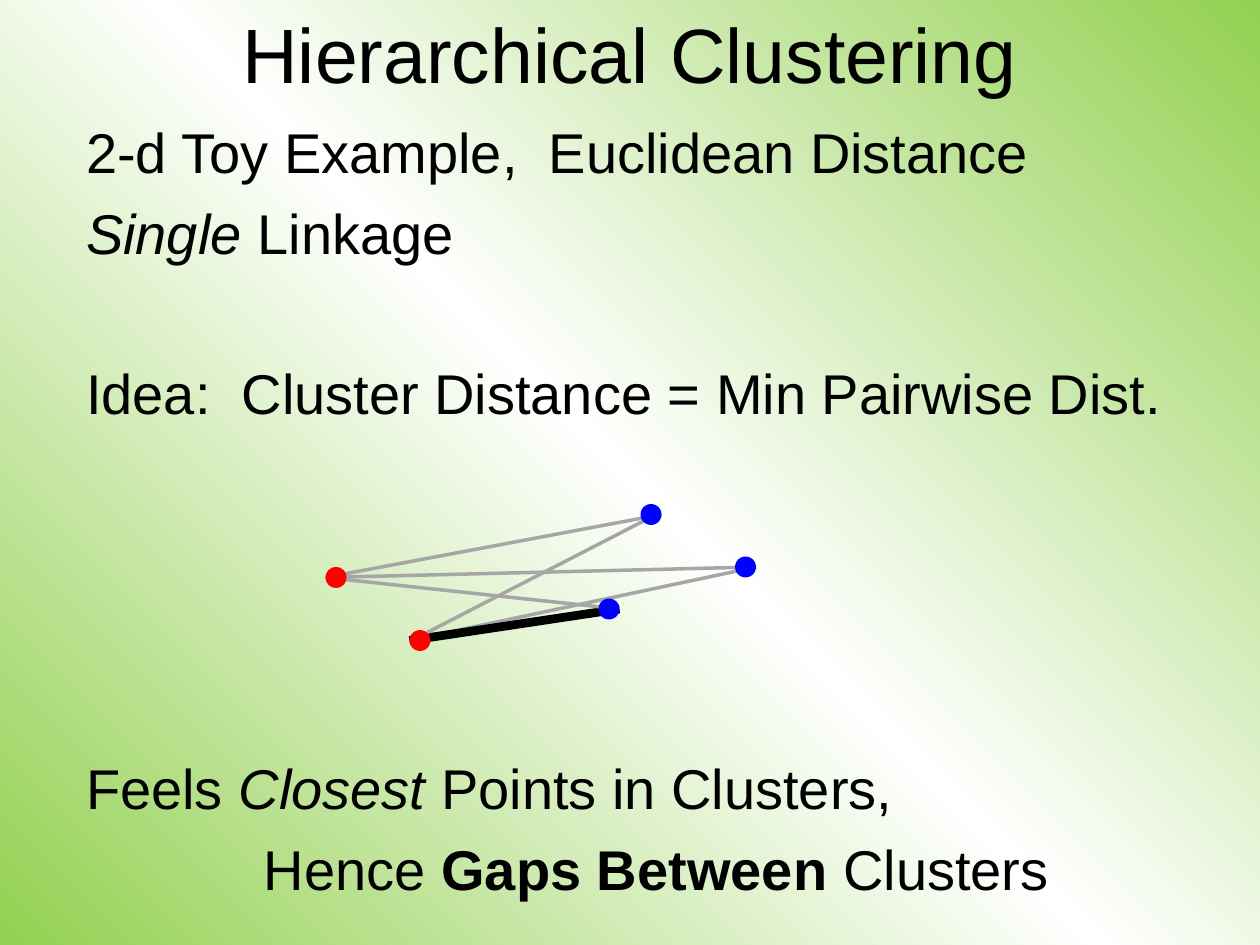
from copy import deepcopy
from dataclasses import dataclass

from lxml import etree
from pptx import Presentation
from pptx.dml.color import RGBColor
from pptx.enum import shapes, text
from pptx.oxml import ns
from pptx.util import Pt

BLACK = RGBColor(0x00, 0x00, 0x00)
WHITE = RGBColor(0xFF, 0xFF, 0xFF)
GREEN = RGBColor(0x92, 0xD0, 0x50)
GREY = RGBColor(0xA6, 0xA6, 0xA6)
RED = RGBColor(0xFF, 0x00, 0x00)
BLUE = RGBColor(0x00, 0x00, 0xFF)

DOT = 12  # diameter of a data point
LINE_GAP = 8  # space before a body line
LINE_PITCH = 44.8  # one body line with its gap


@dataclass(frozen=True)
class DataPoint:
    left: float
    top: float
    color: RGBColor

    @property
    def left_end(self) -> tuple[float, float]:
        return self.left, self.top + DOT / 2

    @property
    def right_end(self) -> tuple[float, float]:
        return self.left + DOT, self.top + DOT / 2


@dataclass(frozen=True)
class BodyLine:
    runs: tuple[tuple[str, str], ...]  # text and style: "", "i" or "b"
    space: float = LINE_GAP
    align: text.PP_ALIGN = text.PP_ALIGN.LEFT


BODY_LINES = (
    BodyLine((("2-d Toy Example,  Euclidean Distance", ""),), space=0),
    BodyLine((("Single", "i"), (" Linkage", ""))),
    BodyLine((("Idea:  Cluster Distance = Min Pairwise Dist.", ""),),
             space=LINE_GAP + LINE_PITCH),
    BodyLine((("Feels ", ""), ("Closest", "i"), (" Points in Clusters,", "")),
             space=LINE_GAP + 4 * LINE_PITCH),
    BodyLine((("Hence ", ""), ("Gaps Between", "b"), (" Clusters", "")),
             align=text.PP_ALIGN.CENTER),
)

RED_LEFT = DataPoint(186, 324, RED)
RED_LOW = DataPoint(234, 360, RED)
BLUE_TOP = DataPoint(366, 288, BLUE)
BLUE_LOW = DataPoint(342, 342, BLUE)
BLUE_RIGHT = DataPoint(420, 318, BLUE)


def add_run(paragraph, words: str, *, size: float, style: str = "") -> None:
    run = paragraph.add_run()
    run.text = words
    run.font.name = "Arial"
    run.font.size = Pt(size)
    run.font.italic = style == "i"
    run.font.bold = style == "b"
    run.font.color.rgb = BLACK


def place(shape, left: float, top: float, width: float, height: float) -> None:
    shape.left, shape.top = Pt(left), Pt(top)
    shape.width, shape.height = Pt(width), Pt(height)


def paint_background(slide) -> None:
    fill = slide.background.fill
    fill.gradient()
    fill.gradient_angle = 225
    first, last = fill.gradient_stops
    first.color.rgb, first.position = WHITE, 0.5
    last.color.rgb, last.position = GREEN, 1
    stops = slide.element.xpath(".//a:gsLst")[0]
    start = deepcopy(stops[-1])
    start.set("pos", "0")
    stops.insert(0, start)


def add_body_line(paragraph, line: BodyLine) -> None:
    paragraph.alignment = line.align
    paragraph.space_before = Pt(line.space)
    properties = paragraph._p.get_or_add_pPr()
    properties.set("marL", "0")
    properties.set("indent", "0")
    etree.SubElement(properties, ns.qn("a:buNone"))
    for words, style in line.runs:
        add_run(paragraph, words, size=32, style=style)


def add_link(slide, start: tuple[float, float], end: tuple[float, float],
             color: RGBColor = GREY, width: float = 2) -> None:
    link = slide.shapes.add_connector(
        shapes.MSO_CONNECTOR.STRAIGHT, *map(Pt, start + end))
    link.line.color.rgb = color
    link.line.width = Pt(width)
    etree.SubElement(link._element.spPr, ns.qn("a:effectLst"))


def add_dot(slide, point: DataPoint) -> None:
    dot = slide.shapes.add_shape(
        shapes.MSO_SHAPE.OVAL, Pt(point.left), Pt(point.top), Pt(DOT), Pt(DOT))
    dot.shadow.inherit = False
    dot.fill.solid()
    dot.fill.fore_color.rgb = point.color
    dot.line.fill.background()


def main() -> None:
    deck = Presentation()
    deck.slide_width, deck.slide_height = Pt(720), Pt(540)
    slide = deck.slides.add_slide(deck.slide_layouts[1])
    paint_background(slide)

    # Title and body
    title, body = slide.placeholders
    place(title, 54, 6, 612, 48)
    title.text_frame.auto_size = text.MSO_AUTO_SIZE.NONE
    title.text_frame.vertical_anchor = text.MSO_ANCHOR.MIDDLE
    heading = title.text_frame.paragraphs[0]
    heading.alignment = text.PP_ALIGN.CENTER
    add_run(heading, "Hierarchical Clustering", size=44)

    place(body, 42, 60, 666, 450)
    frame = body.text_frame
    frame.auto_size = text.MSO_AUTO_SIZE.NONE
    frame.margin_top = Pt(7.2)
    for number, line in enumerate(BODY_LINES):
        add_body_line(frame.add_paragraph() if number else frame.paragraphs[0], line)

    # Pairwise distances, the shortest one in bold black
    add_link(slide, RED_LOW.left_end, BLUE_RIGHT.right_end)
    add_link(slide, RED_LOW.left_end, BLUE_LOW.right_end, BLACK, 5)
    for blue in (BLUE_LOW, BLUE_RIGHT, BLUE_TOP):
        add_link(slide, RED_LEFT.left_end, blue.right_end)
    add_link(slide, (244, 361.5), (375, 294))

    # The two clusters
    for point in (RED_LEFT, RED_LOW, BLUE_TOP, BLUE_LOW, BLUE_RIGHT):
        add_dot(slide, point)

    deck.save("out.pptx")


if __name__ == "__main__":
    main()
